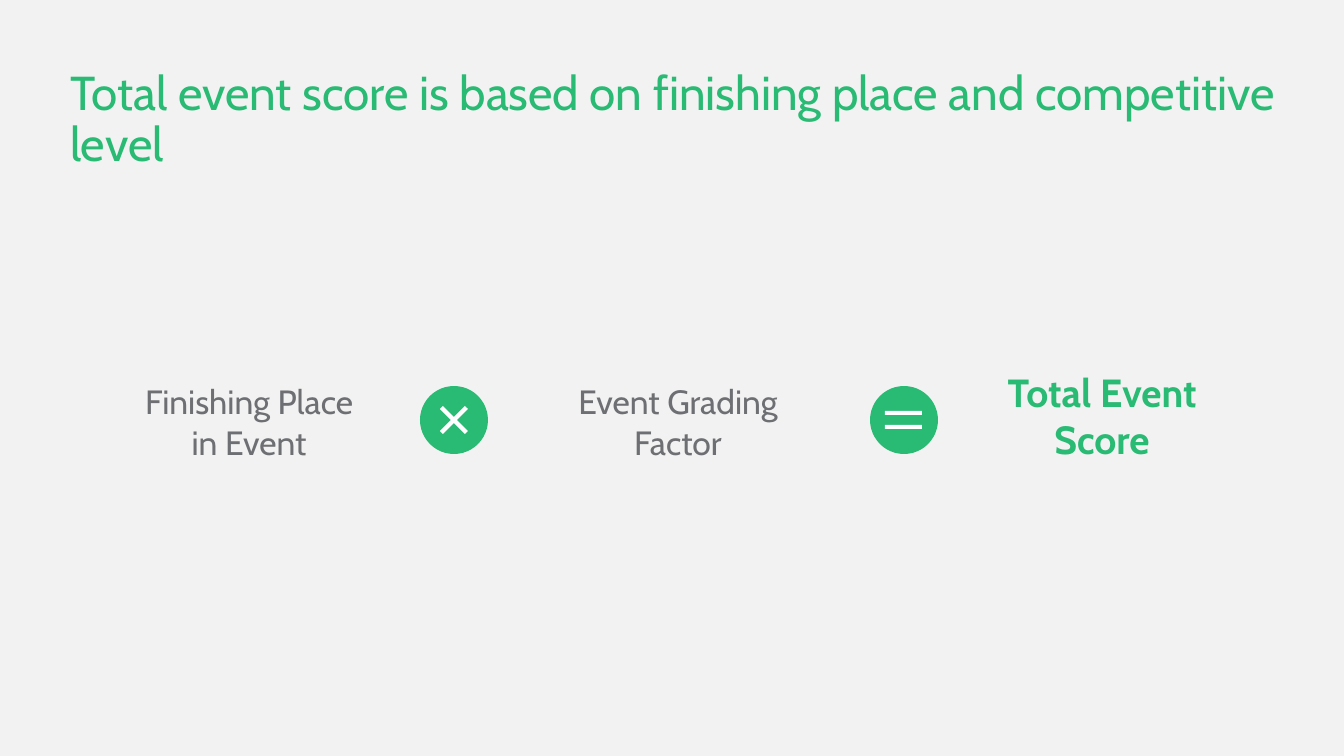
from pptx import Presentation
from pptx import util as u
from pptx.dml.color import RGBColor
from pptx.enum import shapes, text

EMU_PER_PX = 914400 / 100.8
FONT = "Cabin"
COLORS = {"background": "F2F2F2", "green": "29BA74", "gray": "6E6F73", "white": "FFFFFF"}

# Outlines are px offsets from the centre of the operator's circle.
CROSS_ARM = [(11, -14), (0, -3), (-11, -14)]
TIMES = [[point
          for arm in (CROSS_ARM,
                      [(y, -x) for x, y in CROSS_ARM],
                      [(-x, -y) for x, y in CROSS_ARM],
                      [(-y, x) for x, y in CROSS_ARM])
          for point in arm]]
EQUALS = [[(-19, top), (18, top), (18, top + 4), (-19, top + 4)] for top in (-9, 5)]


def px(length):
    return u.Emu(round(length * EMU_PER_PX))


def color(name):
    return RGBColor.from_string(COLORS[name])


def paint(shape, name):
    shape.fill.solid()
    shape.fill.fore_color.rgb = color(name)
    shape.line.fill.background()
    shape.shadow.inherit = False


def write(shape, words, size, ink, bold=False, align=text.PP_ALIGN.LEFT,
          anchor=text.MSO_ANCHOR.TOP, spacing=1.0):
    frame = shape.text_frame
    frame.word_wrap = True
    frame.auto_size = text.MSO_AUTO_SIZE.NONE
    frame.vertical_anchor = anchor
    frame.margin_left = frame.margin_top = frame.margin_right = frame.margin_bottom = 0
    paragraph = frame.paragraphs[0]
    paragraph.alignment = align
    paragraph.line_spacing = spacing
    run = paragraph.add_run()
    run.text = words
    run.font.name = FONT
    run.font.size = u.Pt(size)
    run.font.bold = bold
    run.font.color.rgb = color(ink)


def place_title(slide, left, top, width, height):
    title = slide.shapes.title
    title.left, title.top, title.width, title.height = map(px, (left, top, width, height))
    write(title, "Total event score is based on finishing place and competitive level",
          34, "green", spacing=0.9)


def add_term(slide, left, top, width, height, words, size=24, ink="gray", bold=False):
    box = slide.shapes.add_textbox(px(left), px(top), px(width), px(height))
    write(box, words, size, ink, bold, text.PP_ALIGN.CENTER, text.MSO_ANCHOR.BOTTOM)


def add_operator(slide, left, top, diameter, outlines):
    circle = slide.shapes.add_shape(shapes.MSO_SHAPE.OVAL, px(left), px(top),
                                    px(diameter), px(diameter))
    paint(circle, "green")
    first, *others = outlines
    builder = slide.shapes.build_freeform(*first[0], scale=EMU_PER_PX)
    builder.add_line_segments(first[1:], close=True)
    for outline in others:
        builder.move_to(*outline[0])
        builder.add_line_segments(outline[1:], close=True)
    center_x, center_y = left + diameter / 2, top + diameter / 2
    paint(builder.convert_to_shape(px(center_x), px(center_y)), "white")


def add_equation(slide, left, top, height):
    add_term(slide, left, top, 240, height, "Finishing Place in Event")
    add_term(slide, left + 410, top, 278, height, "Event Grading Factor")
    add_term(slide, left + 860, top, 226, height, "Total Event Score",
             size=28, ink="green", bold=True)
    diameter = 68
    circle_top = top + (height - diameter) / 2
    add_operator(slide, left + 291, circle_top, diameter, TIMES)
    add_operator(slide, left + 741, circle_top, diameter, EQUALS)


def main():
    presentation = Presentation()
    presentation.slide_width, presentation.slide_height = px(1344), px(756)
    title_only = presentation.slide_layouts[5]
    slide = presentation.slides.add_slide(title_only)
    slide.background.fill.solid()
    slide.background.fill.fore_color.rgb = color("background")
    place_title(slide, 70, 69, 1206, 104)
    add_equation(slide, 129, 378, 84)
    presentation.save("out.pptx")


if __name__ == "__main__":
    main()
